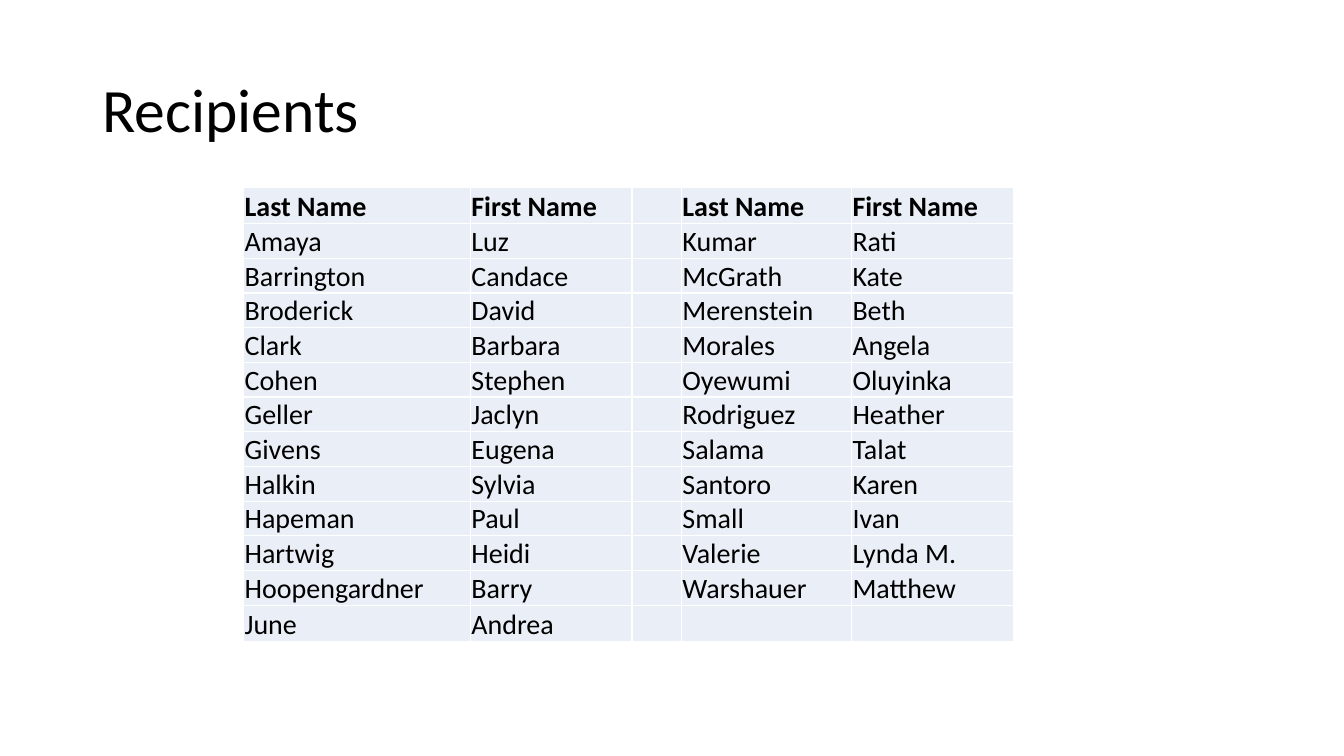
from lxml import etree
from pptx import Presentation
from pptx import util as u
from pptx.dml.color import RGBColor
from pptx.enum import text
from pptx.oxml import ns

PX = 9525
BLACK = RGBColor(0x00, 0x00, 0x00)
WHITE = RGBColor(0xFF, 0xFF, 0xFF)
PALE_BLUE = RGBColor(0xEA, 0xEF, 0xF7)
FONT = "Calibri"

COL_WIDTHS = [216, 154, 47, 162, 154]
EDGE_ROW, INNER_ROW = 35, 33
HEADER = ("Last Name", "First Name")
LEFT_NAMES = [
    ("Amaya", "Luz"), ("Barrington", "Candace"), ("Broderick", "David"),
    ("Clark", "Barbara"), ("Cohen", "Stephen"), ("Geller", "Jaclyn"),
    ("Givens", "Eugena"), ("Halkin", "Sylvia"), ("Hapeman", "Paul"),
    ("Hartwig", "Heidi"), ("Hoopengardner", "Barry"), ("June", "Andrea"),
]
RIGHT_NAMES = [
    ("Kumar", "Rati"), ("McGrath", "Kate"), ("Merenstein", "Beth"),
    ("Morales", "Angela"), ("Oyewumi", "Oluyinka"), ("Rodriguez", "Heather"),
    ("Salama", "Talat"), ("Santoro", "Karen"), ("Small", "Ivan"),
    ("Valerie", "Lynda M."), ("Warshauer", "Matthew"), ("", ""),
]


def px(n):
    """Convert pixels to EMU."""
    return u.Emu(n * PX)


def format_runs(p, size, bold=False):
    """Apply the slide's font to every run of a paragraph."""
    for r in p.runs:
        r.font.name = FONT
        r.font.size = u.Pt(size)
        r.font.bold = bold
        r.font.color.rgb = BLACK


def add_title(s, title, x, y, w, h):
    """Add the slide title, centred vertically in its box."""
    tf = s.shapes.add_textbox(px(x), px(y), px(w), px(h)).text_frame
    tf.word_wrap = True
    tf.vertical_anchor = text.MSO_ANCHOR.MIDDLE
    tf.text = title
    p = tf.paragraphs[0]
    p.line_spacing = 0.9
    format_runs(p, 44)


def set_borders(cell, color, width):
    """Draw a solid line on all four sides of a cell."""
    tcPr = cell._tc.get_or_add_tcPr()
    for side in ("lnL", "lnR", "lnT", "lnB"):
        ln = etree.SubElement(tcPr, ns.qn(f"a:{side}"), w=str(u.Pt(width)))
        fill = etree.SubElement(ln, ns.qn("a:solidFill"))
        etree.SubElement(fill, ns.qn("a:srgbClr"), val=str(color))


def fill_cell(cell, value, bold):
    """Write and style one table cell."""
    set_borders(cell, WHITE, 1)
    cell.fill.solid()
    cell.fill.fore_color.rgb = PALE_BLUE
    cell.margin_left = cell.margin_right = cell.margin_top = px(1)
    cell.margin_bottom = 0
    cell.vertical_anchor = text.MSO_ANCHOR.BOTTOM
    p = cell.text_frame.paragraphs[0]
    p.text = value
    format_runs(p, 20, bold)


def add_names_table(s, rows, x, y):
    """Add the table of names with a bold header row."""
    heights = [EDGE_ROW] + [INNER_ROW] * (len(rows) - 2) + [EDGE_ROW]
    table = s.shapes.add_table(len(rows), len(COL_WIDTHS), px(x), px(y),
                               px(sum(COL_WIDTHS)), px(sum(heights))).table
    table.horz_banding = False
    for col, width in zip(table.columns, COL_WIDTHS):
        col.width = px(width)
    for i, values in enumerate(rows):
        table.rows[i].height = px(heights[i])
        for j, value in enumerate(values):
            fill_cell(table.cell(i, j), value, bold=i == 0)


def main():
    """Build the recipients slide."""
    prs = Presentation()
    prs.slide_width, prs.slide_height = px(1280), px(720)
    s = prs.slides.add_slide(prs.slide_layouts[6])
    add_title(s, "Recipients", 88, 38, 1104, 139)
    rows = [(*left, "", *right) for left, right in
            zip([HEADER] + LEFT_NAMES, [HEADER] + RIGHT_NAMES)]
    add_names_table(s, rows, 232, 178)
    prs.save("out.pptx")


if __name__ == "__main__":
    main()
